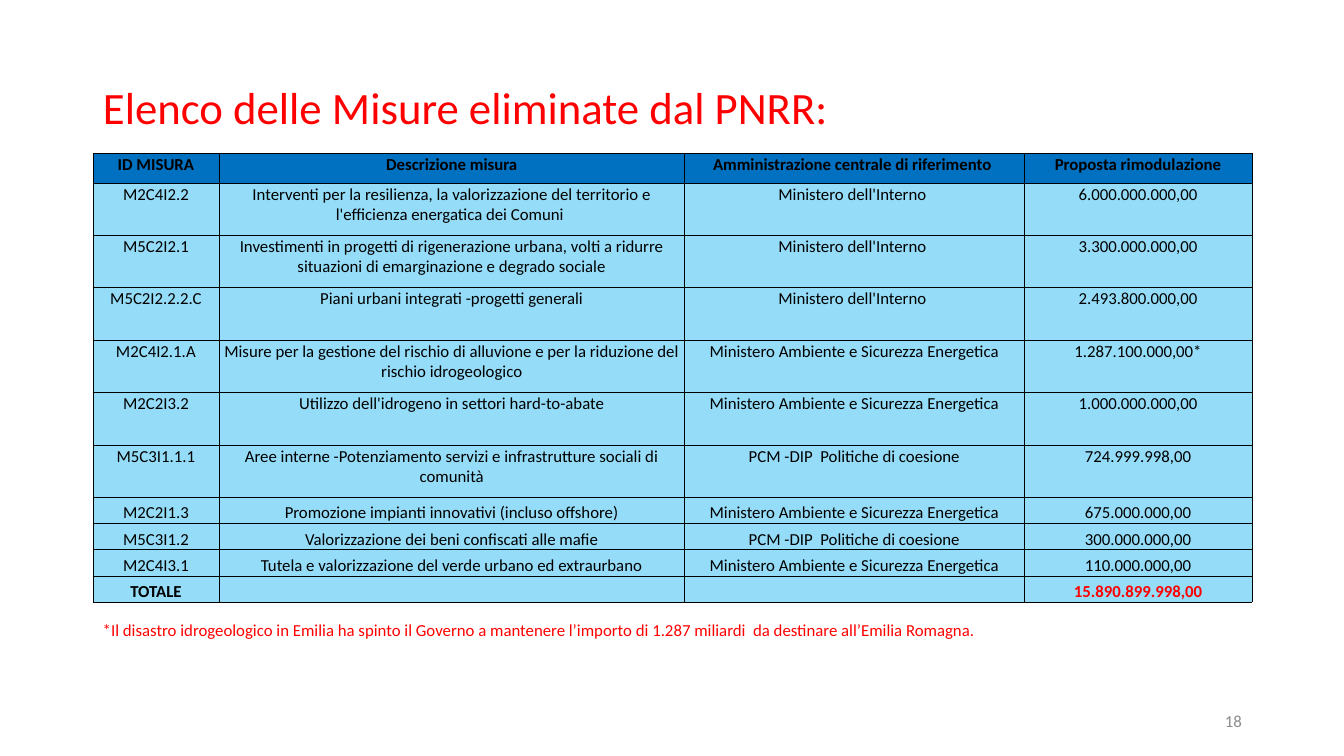
import lxml.etree
import pptx
import pptx.dml.color
import pptx.enum.text
import pptx.oxml.ns
import pptx.util

Cm = pptx.util.Cm
Pt = pptx.util.Pt
ALIGN = pptx.enum.text.PP_ALIGN
ANCHOR = pptx.enum.text.MSO_ANCHOR
qn = pptx.oxml.ns.qn

COLORS = {"accent": "FF0000", "header": "0070C0", "body": "94DCF8",
          "ink": "000000", "page": "8C8C8C"}
FONT = "Calibri"
LEFT, WIDTH = 2.34, 29.21
COLUMN_WIDTHS = [3.18, 11.73, 8.56, 5.74]
HEADER_HEIGHT, TALL_HEIGHT, SHORT_HEIGHT = 0.75, 1.32, 0.66

INTERNO = "Ministero dell'Interno "
AMBIENTE = "Ministero Ambiente e Sicurezza Energetica"
COESIONE = "PCM -DIP  Politiche di coesione"
HEADINGS = ("ID MISURA", "Descrizione misura",
            "Amministrazione centrale di riferimento ", "Proposta rimodulazione")
MAJOR_MEASURES = [
    ("M2C4I2.2", "Interventi per la resilienza, la valorizzazione del territorio e "
     "l'efficienza energatica dei Comuni ", INTERNO, "6.000.000.000,00"),
    ("M5C2I2.1", "Investimenti in progetti di rigenerazione urbana, volti a ridurre "
     "situazioni di emarginazione e degrado sociale", INTERNO, "3.300.000.000,00"),
    ("M5C2I2.2.2.C", "Piani urbani integrati -progetti generali", INTERNO, "2.493.800.000,00"),
    ("M2C4I2.1.A", "Misure per la gestione del rischio di alluvione e per la riduzione del "
     "rischio idrogeologico", AMBIENTE, "1.287.100.000,00*"),
    ("M2C2I3.2", "Utilizzo dell'idrogeno in settori hard-to-abate", AMBIENTE, "1.000.000.000,00"),
    ("M5C3I1.1.1", "Aree interne -Potenziamento servizi e infrastrutture sociali di comunità",
     COESIONE, "724.999.998,00"),
]
MINOR_MEASURES = [
    ("M2C2I1.3", "Promozione impianti innovativi (incluso offshore)", AMBIENTE, "675.000.000,00"),
    ("M5C3I1.2", "Valorizzazione dei beni confiscati alle mafie", COESIONE, "300.000.000,00"),
    ("M2C4I3.1", "Tutela e valorizzazione del verde urbano ed extraurbano", AMBIENTE,
     "110.000.000,00"),
]
TOTAL = ("TOTALE", "", "", "15.890.899.998,00")


def rgb(name):
    """Return the named colour."""
    return pptx.dml.color.RGBColor.from_string(COLORS[name])


def write(frame, text, size, color, align, bold=False):
    """Fill a text frame with one formatted paragraph."""
    frame.text = text
    paragraph = frame.paragraphs[0]
    paragraph.alignment = align
    for run in paragraph.runs:
        run.font.name = FONT
        run.font.size = Pt(size)
        run.font.bold = bold
        run.font.color.rgb = rgb(color)
    return paragraph


def add_heading(slide, left, top, width, height):
    """Place the slide title in the given box."""
    heading = slide.shapes.title
    heading.left, heading.top, heading.width, heading.height = map(Cm, (left, top, width, height))
    frame = heading.text_frame
    frame.word_wrap = True
    frame.auto_size = pptx.enum.text.MSO_AUTO_SIZE.NONE
    frame.vertical_anchor = ANCHOR.TOP
    paragraph = write(frame, "Elenco delle Misure eliminate dal PNRR:", 32, "accent", ALIGN.JUSTIFY)
    paragraph.line_spacing = 1.07
    paragraph.space_before = Pt(0)


def add_note(slide, left, top, width, height, text, color, align, anchor):
    """Place a line of small text in the given box."""
    note = slide.shapes.add_textbox(*map(Cm, (left, top, width, height)))
    note.text_frame.word_wrap = True
    note.text_frame.vertical_anchor = anchor
    write(note.text_frame, text, 12, color, align)


def outline_cell(cell):
    """Draw a thin line along each side of a cell."""
    properties = cell._tc.get_or_add_tcPr()
    for side in ("a:lnL", "a:lnR", "a:lnT", "a:lnB"):
        line = lxml.etree.SubElement(properties, qn(side), w=str(Pt(0.5)))
        fill = lxml.etree.SubElement(line, qn("a:solidFill"))
        lxml.etree.SubElement(fill, qn("a:srgbClr"), val=COLORS["ink"])


def format_cell(cell, text, fill, color, bold, anchor):
    """Write and style one table cell."""
    outline_cell(cell)
    cell.fill.solid()
    cell.fill.fore_color.rgb = rgb(fill)
    cell.margin_left = cell.margin_right = cell.margin_top = Cm(0.03)
    cell.margin_bottom = Cm(0)
    cell.vertical_anchor = anchor
    paragraph = write(cell.text_frame, text, 12, color, ALIGN.CENTER, bold)
    if not text:
        lxml.etree.SubElement(paragraph._p, qn("a:endParaRPr"), sz="1200")


def add_measures(slide, left, top, width):
    """Place the table of measures at the given position and width."""
    records = [HEADINGS, *MAJOR_MEASURES, *MINOR_MEASURES, TOTAL]
    heights = ([HEADER_HEIGHT] + [TALL_HEIGHT] * len(MAJOR_MEASURES)
               + [SHORT_HEIGHT] * (len(MINOR_MEASURES) + 1))
    measures = slide.shapes.add_table(len(records), len(HEADINGS), Cm(left), Cm(top),
                                      Cm(width), Cm(sum(heights))).table
    for column, share in zip(measures.columns, COLUMN_WIDTHS):
        column.width = Cm(width * share / sum(COLUMN_WIDTHS))
    for index, (record, height) in enumerate(zip(records, heights)):
        measures.rows[index].height = Cm(height)
        fill = "header" if record is HEADINGS else "body"
        bold = record is HEADINGS or record is TOTAL
        anchor = ANCHOR.BOTTOM if height == SHORT_HEIGHT else ANCHOR.TOP
        for position, text in enumerate(record):
            is_sum = record is TOTAL and position == len(record) - 1
            format_cell(measures.cell(index, position), text, fill,
                        "accent" if is_sum else "ink", bold, anchor)


def main():
    """Build and save the presentation."""
    deck = pptx.Presentation()
    deck.slide_width, deck.slide_height = Cm(33.87), Cm(19.05)
    slide = deck.slides.add_slide(deck.slide_layouts[5])
    add_heading(slide, LEFT, 1.78, WIDTH, 1.9)
    add_note(slide, 23.93, 17.65, 7.62, 1.02, "18", "page", ALIGN.RIGHT, ANCHOR.MIDDLE)
    add_measures(slide, LEFT, 3.86, WIDTH)
    add_note(slide, LEFT, 15.49, 28.85, 0.77,
             "*Il disastro idrogeologico in Emilia ha spinto il Governo a mantenere l’importo "
             "di 1.287 miliardi  da destinare all’Emilia Romagna.",
             "accent", ALIGN.LEFT, ANCHOR.TOP)
    deck.save("out.pptx")


if __name__ == "__main__":
    main()
